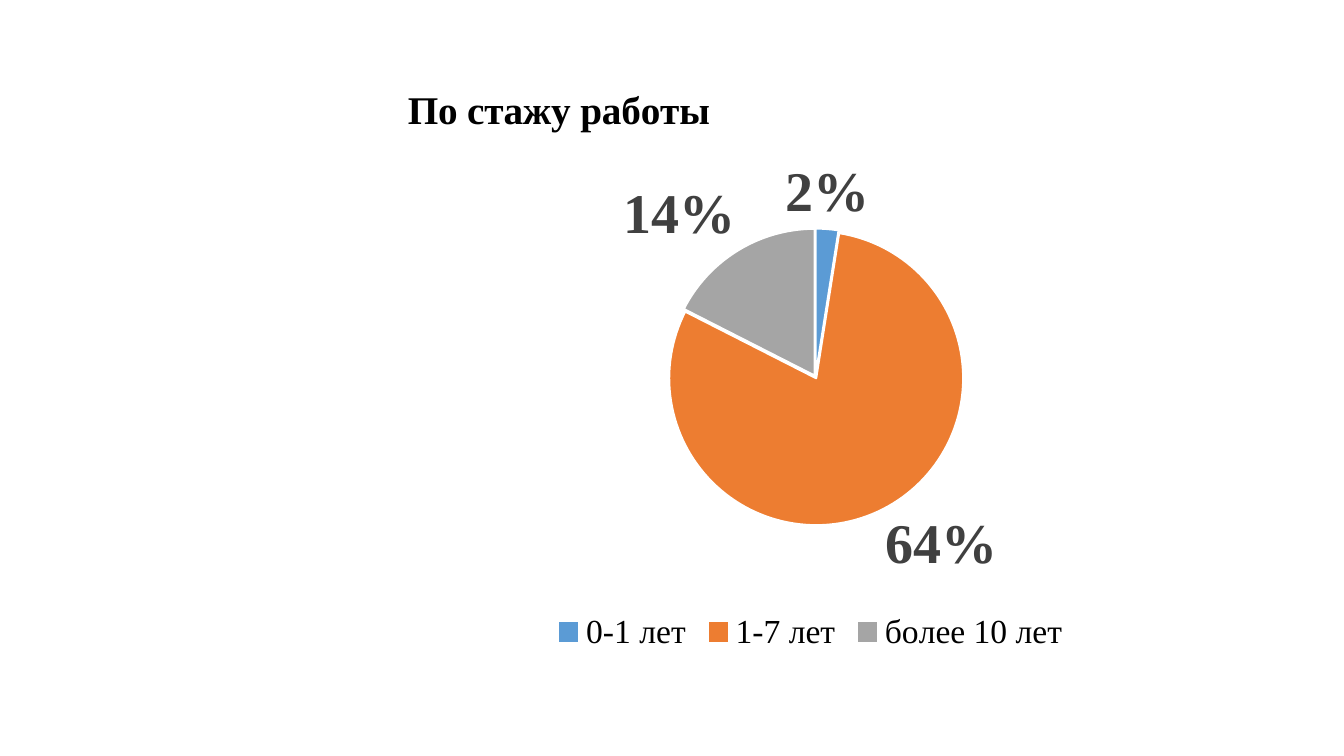
from lxml import etree
from pptx import Presentation
from pptx.chart.data import CategoryChartData
from pptx.dml.color import RGBColor
from pptx.enum.chart import XL_CHART_TYPE, XL_LABEL_POSITION, XL_LEGEND_POSITION
from pptx.oxml.ns import qn
from pptx.util import Inches, Pt

PIE = XL_CHART_TYPE.PIE
OUTER = XL_LABEL_POSITION.OUTSIDE_END
BOTTOM = XL_LEGEND_POSITION.BOTTOM

WIDTH, HEIGHT = Inches(13.33), Inches(7.5)
SERIF = "Times New Roman"
COLORS = {
    "text": "000000",
    "label": "404040",
    "edge": "FFFFFF",
    "0-1 лет": "5B9BD5",
    "1-7 лет": "ED7D31",
    "более 10 лет": "A5A5A5",
}
SHARES = {"0-1 лет": 0.02, "1-7 лет": 0.64, "более 10 лет": 0.14}


def color(name):
    return RGBColor.from_string(COLORS[name])


def style(font, size, name="text", bold=False, face=SERIF):
    font.name = face
    font.size = Pt(size)
    font.bold = bold
    font.color.rgb = color(name)


def place(layout, **values):
    for child in list(layout):
        layout.remove(child)
    manual = etree.SubElement(layout, qn("c:manualLayout"))
    for tag, value in values.items():
        etree.SubElement(manual, qn("c:" + tag)).set("val", str(value))


def add_pie(slide):
    data = CategoryChartData(number_format="0%")
    data.categories = list(SHARES)
    data.add_series("Series 1", list(SHARES.values()))
    frame = slide.shapes.add_chart(
        PIE, int(WIDTH * 0.222), int(HEIGHT * 0.08),
        int(WIDTH * 0.762), int(HEIGHT * 0.79), data)
    chart = frame.chart
    style(chart.font, 10, face="Calibri")
    plot = chart.plots[0]
    plot.vary_by_categories = True
    area = plot._element.getparent()
    layout = area.find(qn("c:layout"))
    if layout is None:
        layout = etree.Element(qn("c:layout"))
        area.insert(0, layout)
    place(layout, layoutTarget="inner", xMode="edge", yMode="edge",
          x=0.36, y=0.28, w=0.29, h=0.5)
    return chart


def add_title(chart, text):
    title = chart.chart_title
    title.text_frame.text = text
    style(title.text_frame.paragraphs[0].font, 28, bold=True)
    root = title._element
    layout = root.find(qn("c:layout"))
    if layout is None:
        layout = etree.Element(qn("c:layout"))
        root.find(qn("c:tx")).addnext(layout)
    place(layout, xMode="edge", yMode="edge", x=0.1, y=0.03)


def paint(series):
    burst = etree.Element(qn("c:explosion"))
    burst.set("val", "1")
    series._element.find(qn("c:tx")).addnext(burst)
    for index, name in enumerate(SHARES):
        part = series.points[index].format
        part.fill.solid()
        part.fill.fore_color.rgb = color(name)
        part.line.color.rgb = color("edge")
        part.line.width = Pt(1.5)


def add_labels(plot):
    plot.has_data_labels = True
    labels = plot.data_labels
    labels.show_value = True
    labels.show_percentage = False
    labels.number_format = "0%"
    labels.number_format_is_linked = False
    labels.position = OUTER
    style(labels.font, 40, "label", True)


def add_legend(chart):
    chart.has_legend = True
    chart.legend.position = BOTTOM
    chart.legend.include_in_layout = False
    style(chart.legend.font, 24)


def main():
    deck = Presentation()
    deck.slide_width, deck.slide_height = WIDTH, HEIGHT
    slide = deck.slides.add_slide(deck.slide_layouts[6])
    chart = add_pie(slide)
    add_title(chart, "По стажу работы")
    paint(chart.plots[0].series[0])
    add_labels(chart.plots[0])
    add_legend(chart)
    deck.save("out.pptx")


if __name__ == "__main__":
    main()
